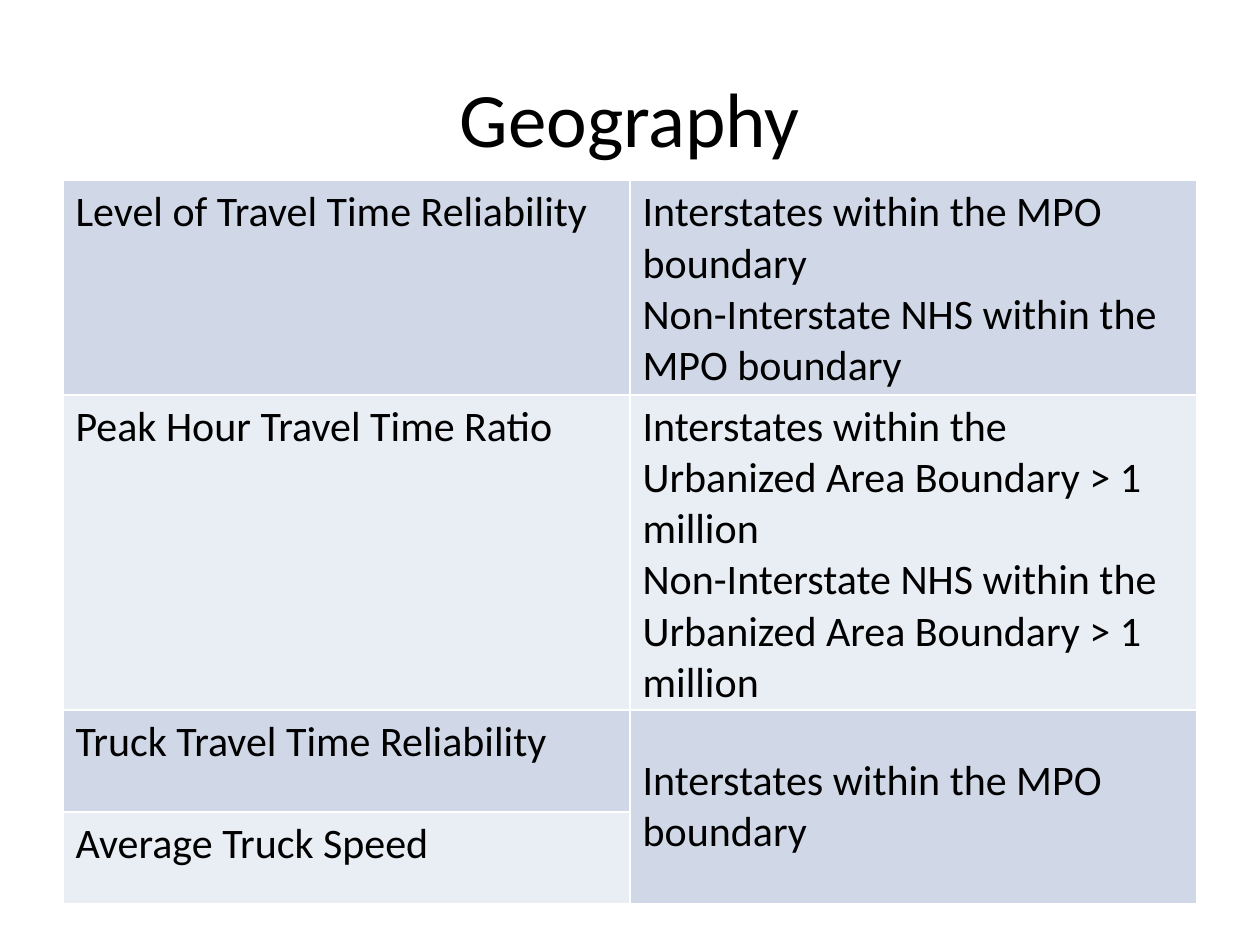
"""Build the Geography slide: a title above a table of measures and their coverage."""
from pptx import Presentation
from pptx.dml.color import RGBColor
from pptx.enum.text import MSO_ANCHOR as Anchor, PP_ALIGN as Align
from pptx.util import Pt

COLORS = {"text": "000000", "odd": "D0D8E8", "even": "E9EDF4"}


def write_text(frame, lines, size=24, align=Align.LEFT, anchor=Anchor.TOP):
    frame.word_wrap = True
    frame.vertical_anchor = anchor
    for index, line in enumerate(lines):
        paragraph = frame.paragraphs[0] if index == 0 else frame.add_paragraph()
        paragraph.alignment = align
        run = paragraph.add_run()
        run.text = line
        run.font.name = "Calibri"
        run.font.size = Pt(size)
        run.font.color.rgb = RGBColor.from_string(COLORS["text"])


presentation = Presentation()
presentation.slide_width, presentation.slide_height = Pt(720), Pt(540)
slide = presentation.slides.add_slide(presentation.slide_layouts[6])

title = slide.shapes.add_textbox(Pt(36), Pt(21.6), Pt(648), Pt(90))
write_text(title.text_frame, ["Geography"], size=44, align=Align.CENTER, anchor=Anchor.MIDDLE)

measures = [
    ("Level of Travel Time Reliability", 110,
     ["Interstates within the MPO boundary",
      "Non-Interstate NHS within the MPO boundary"]),
    ("Peak Hour Travel Time Ratio", 162,
     ["Interstates within the Urbanized Area Boundary > 1 million",
      "Non-Interstate NHS within the Urbanized Area Boundary > 1 million"]),
    ("Truck Travel Time Reliability", 58.3, ["Interstates within the MPO boundary"]),
    ("Average Truck Speed", 52.6, []),
]
total_height = sum(height for _, height, _ in measures)
table = slide.shapes.add_table(
    len(measures), 2, Pt(36), Pt(103.2), Pt(648), Pt(total_height)).table
table.first_row = False
table.cell(2, 1).merge(table.cell(3, 1))

for row, (measure, height, coverage) in enumerate(measures):
    table.rows[row].height = Pt(height)
    for column, lines in enumerate(([measure], coverage)):
        cell = table.cell(row, column)
        cell.fill.solid()
        cell.fill.fore_color.rgb = RGBColor.from_string(COLORS["even" if row % 2 else "odd"])
        write_text(cell.text_frame, lines)
table.cell(2, 1).vertical_anchor = Anchor.MIDDLE

presentation.save("out.pptx")
